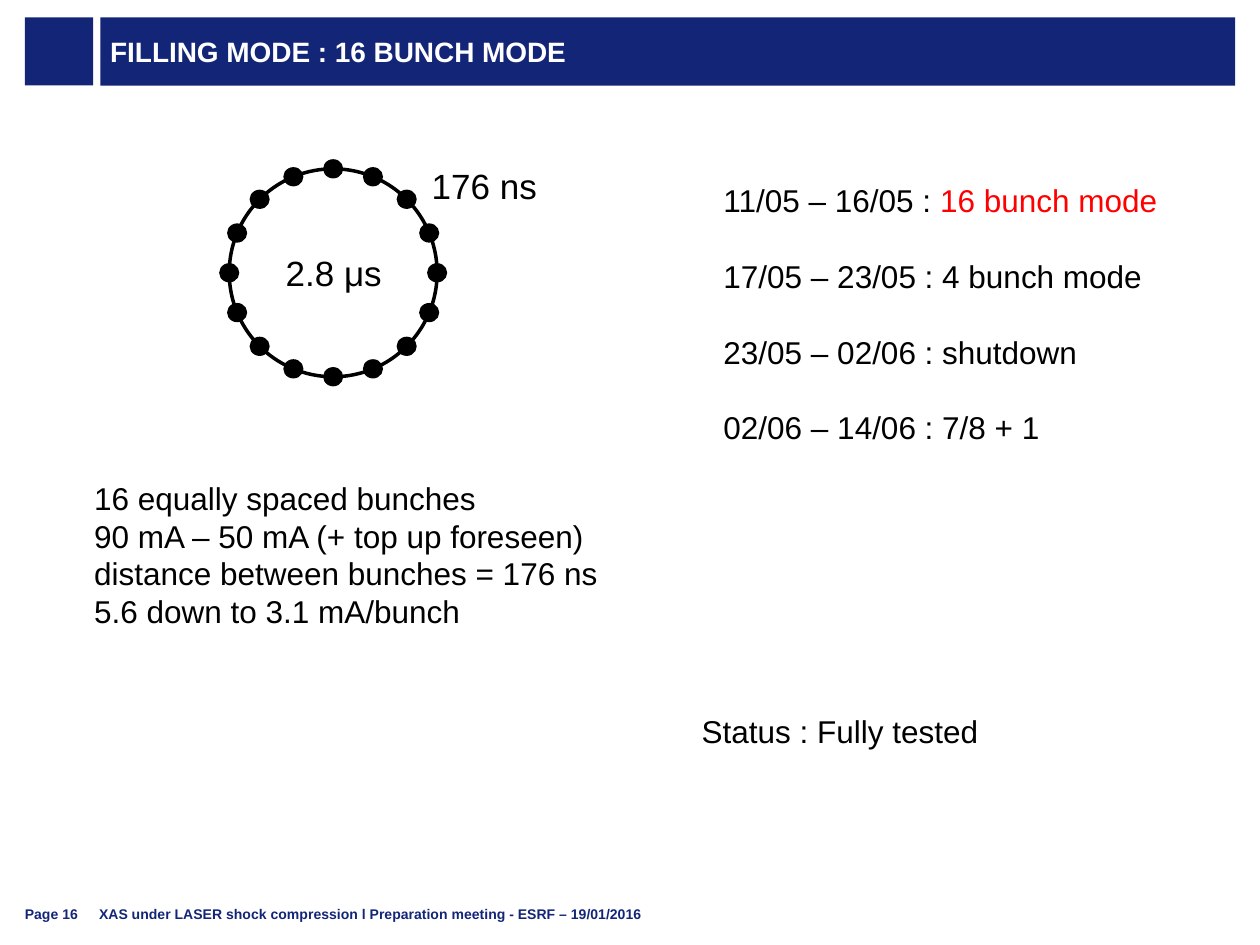
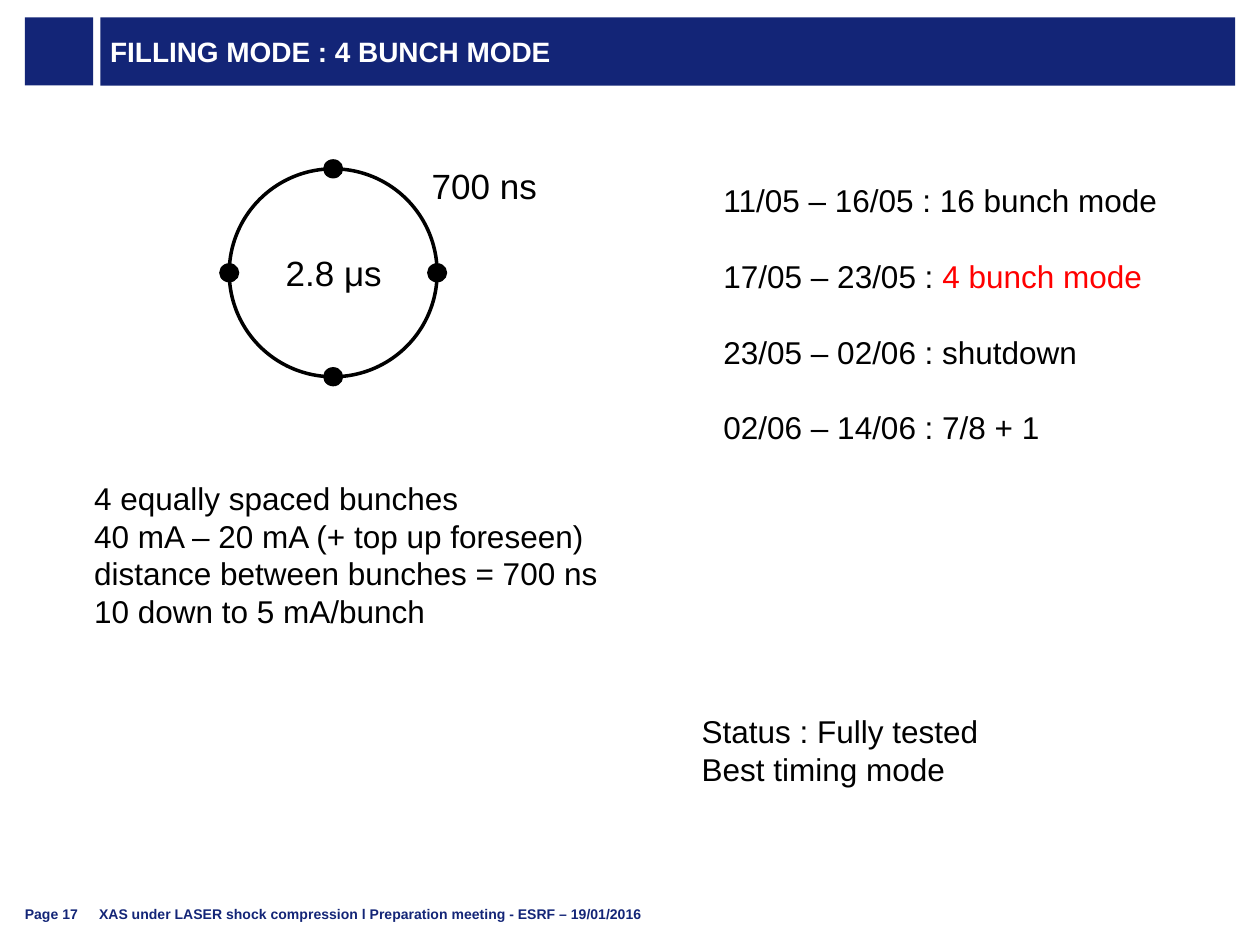
"""Build two slides on the bunch filling modes of a storage ring."""
from math import cos, pi, sin

from lxml.etree import SubElement
from pptx import Presentation
from pptx.dml.color import RGBColor
from pptx.enum.shapes import MSO_SHAPE as Shape
from pptx.enum.text import MSO_ANCHOR as Anchor, MSO_AUTO_SIZE as AutoSize, PP_ALIGN as Align
from pptx.oxml.ns import qn
from pptx.util import Pt

FONT = "Arial"
NAVY, WHITE, BLACK, RED = "132577", "FFFFFF", "000000", "FF0000"
BAND_TOP, BAND_HEIGHT = 9.9, 39
RING_X, RING_Y, RING_RADIUS = 190.4, 155.9, 59.4
BUNCH_WIDTH, BUNCH_HEIGHT = 11.5, 11
LINE_RATIO = 1.2
MEETING = "XAS under LASER shock compression l Preparation meeting - ESRF – 19/01/2016"
SCHEDULE = [
    ("11/05 – 16/05 : ", "16 bunch mode"),
    ("17/05 – 23/05 : ", "4 bunch mode"),
    ("23/05 – 02/06 : ", "shutdown"),
    ("02/06 – 14/06 : ", "7/8 + 1"),
]
MODES = [
    dict(page=16, bunches=16, spacing="176 ns", current="90 mA – 50 mA",
         per_bunch="5.6 down to 3.1", status=["Status : Fully tested"]),
    dict(page=17, bunches=4, spacing="700 ns", current="40 mA – 20 mA",
         per_bunch="10 down to 5", status=["Status : Fully tested", "Best timing mode"]),
]


def rgb(hex_color):
    """Turn a hex string into a colour."""
    return RGBColor.from_string(hex_color)


def place(shape, left, top, width, height):
    """Move and size a shape, in points."""
    shape.left, shape.top, shape.width, shape.height = map(Pt, (left, top, width, height))


def write(shape, lines, size, bold=False, gap=0):
    """Write lines, each a list of (text, colour) runs."""
    frame = shape.text_frame
    frame.auto_size = AutoSize.NONE
    for index, runs in enumerate(lines):
        paragraph = frame.add_paragraph() if index else frame.paragraphs[0]
        properties = paragraph._p.get_or_add_pPr()
        properties.set("marL", "0")
        properties.set("indent", "0")
        SubElement(properties, qn("a:buNone"))
        paragraph.alignment = Align.LEFT
        paragraph.line_spacing = Pt(size * LINE_RATIO)
        paragraph.space_before = Pt(gap if index else 0)
        for text, color in runs:
            run = paragraph.add_run()
            run.text = text
            run.font.name, run.font.size, run.font.bold = FONT, Pt(size), bold
            run.font.color.rgb = rgb(color)


def plain(texts):
    """Give each text as a line of one black run."""
    return [[(text, BLACK)] for text in texts]


def set_margins(frame, side, anchor):
    """Set side margins, no upper or lower margin, and the anchor."""
    frame.margin_left = frame.margin_right = Pt(side)
    frame.margin_top = frame.margin_bottom = 0
    frame.vertical_anchor = anchor


def add_label(slide, box, lines, size, bold=False):
    """Add a text box."""
    label = slide.shapes.add_textbox(*map(Pt, box))
    label.text_frame.word_wrap = True
    write(label, lines, size, bold)
    return label


def add_figure(slide, kind, box, fill=None, outline=None):
    """Add a flat preset shape with a fill or an outline."""
    figure = slide.shapes.add_shape(kind, *map(Pt, box))
    figure.shadow.inherit = False
    if fill:
        figure.fill.solid()
        figure.fill.fore_color.rgb = rgb(fill)
    else:
        figure.fill.background()
    if outline:
        figure.line.color.rgb = rgb(outline)
        figure.line.width = Pt(2)
    else:
        figure.line.fill.background()


def add_header(slide, heading):
    """Add the navy square and the title band."""
    add_figure(slide, Shape.RECTANGLE, (14.2, BAND_TOP, BAND_HEIGHT, BAND_HEIGHT), NAVY)
    title = slide.shapes.title
    place(title, 57.3, BAND_TOP, 648.5, BAND_HEIGHT)
    title.fill.solid()
    title.fill.fore_color.rgb = rgb(NAVY)
    set_margins(title.text_frame, 5.7, Anchor.MIDDLE)
    write(title, [[(heading, WHITE)]], 16, bold=True)


def add_footer(slide, page):
    """Add the page number and the meeting line."""
    for left, width, text in ((14.2, 40, f"Page {page}"), (56.6, 482, MEETING)):
        footer = add_label(slide, (left, 510.5, width, 16.5), [[(text, NAVY)]], 8, bold=True)
        set_margins(footer.text_frame, 0, Anchor.BOTTOM)


def add_ring(slide, bunches, spacing):
    """Draw the ring with equally spaced bunches and its times."""
    add_label(slide, (156.2, 140.4, 75, 31.5), plain(["2.8 μs"]), 20)
    add_label(slide, (239.6, 90.7, 80, 31.5), plain([spacing]), 20)
    diameter = 2 * RING_RADIUS
    add_figure(slide, Shape.OVAL,
               (RING_X - RING_RADIUS, RING_Y - RING_RADIUS, diameter, diameter), outline=BLACK)
    for index in range(bunches):
        angle = 2 * pi * index / bunches
        left = RING_X + RING_RADIUS * sin(angle) - BUNCH_WIDTH / 2
        top = RING_Y - RING_RADIUS * cos(angle) - BUNCH_HEIGHT / 2
        add_figure(slide, Shape.OVAL, (left, top, BUNCH_WIDTH, BUNCH_HEIGHT), BLACK)


def add_mode_slide(deck, page, bunches, spacing, current, per_bunch, status):
    """Add the slide of one filling mode."""
    slide = deck.slides.add_slide(deck.slide_layouts.get_by_name("Two Content"))
    mode = f"{bunches} bunch mode"
    add_header(slide, f"FILLING MODE : {mode.upper()}")
    facts, schedule = slide.placeholders[1], slide.placeholders[2]
    place(facts, 46.6, 270, 312, 94.5)
    write(facts, plain([
        f"{bunches} equally spaced bunches",
        f"{current} (+ top up foreseen)",
        f"distance between bunches = {spacing}",
        f"{per_bunch} mA/bunch",
    ]), 18)
    place(schedule, 406.2, 100.1, 275, 160)
    write(schedule, [[(dates, BLACK), (planned, RED if planned == mode else BLACK)]
                     for dates, planned in SCHEDULE], 18, gap=18 * LINE_RATIO)
    add_label(slide, (393.9, 403.2, 180, 7.2 + 21.6 * len(status)), plain(status), 18)
    add_ring(slide, bunches, spacing)
    add_footer(slide, page)


def main():
    """Build and save the deck."""
    deck = Presentation()
    deck.slide_width, deck.slide_height = Pt(720), Pt(540)
    for mode in MODES:
        add_mode_slide(deck, **mode)
    deck.save("out.pptx")


if __name__ == "__main__":
    main()
